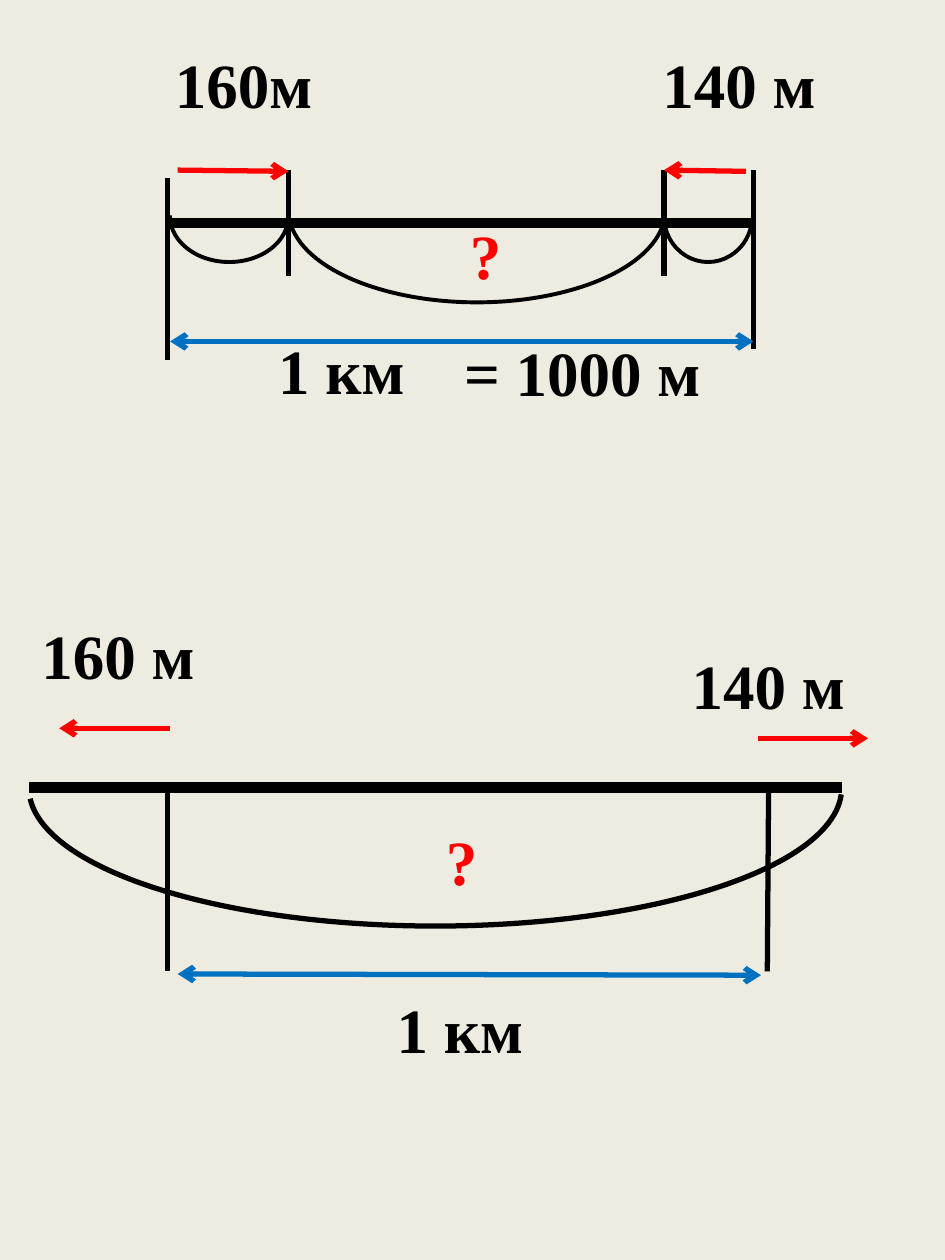
from dataclasses import dataclass
from lxml.etree import SubElement
from pptx import Presentation
from pptx.dml.color import RGBColor
from pptx.enum.shapes import MSO_CONNECTOR as CONN, MSO_SHAPE as SHAPE
from pptx.enum.text import MSO_AUTO_SIZE as FIT, PP_ALIGN
from pptx.oxml.ns import qn
from pptx.util import Inches, Pt


@dataclass(frozen=True)
class Theme:
    paper: RGBColor = RGBColor(0xEE, 0xEC, 0xE1)
    ink: RGBColor = RGBColor(0, 0, 0)
    red: RGBColor = RGBColor(0xFF, 0, 0)
    blue: RGBColor = RGBColor(0, 0x70, 0xC0)
    font: str = "Times New Roman"
    size: Pt = Pt(36)
    road: Pt = Pt(6)
    stroke: Pt = Pt(3)
    thin: Pt = Pt(2.25)


T = Theme()
prs = Presentation()
prs.slide_width, prs.slide_height = Inches(7.5), Inches(10)
s = prs.slides.add_slide(prs.slide_layouts[6])
s.background.fill.solid()
s.background.fill.fore_color.rgb = T.paper


def add_line(x1, y1, x2, y2, color=T.ink, width=T.stroke, ends=()):
    c = s.shapes.add_connector(CONN.STRAIGHT, *map(Inches, (x1, y1, x2, y2)))
    c.line.color.rgb = color
    c.line.width = width
    ln = c.line._get_or_add_ln()
    for end in ends:
        SubElement(ln, qn(f"a:{end}"), type="arrow")
    SubElement(c._element.spPr, qn("a:effectLst"))


roads = [(1.35, 1.77, 5.98), (0.23, 6.25, 6.68)]
for x1, y, x2 in roads:
    add_line(x1, y, x2, y, width=T.road)

posts = [
    (1.33, 1.41, 1.33, 2.86), (5.98, 1.35, 5.98, 2.77),
    (2.29, 1.35, 2.29, 2.19), (5.27, 1.35, 5.27, 2.19),
    (6.1, 6.25, 6.09, 7.71), (1.33, 6.25, 1.33, 7.71),
]
for post in posts:
    add_line(*post)

moves = [
    (1.41, 1.35, 2.29, 1.36), (5.92, 1.36, 5.27, 1.35),
    (1.35, 5.78, 0.47, 5.78), (6.02, 5.86, 6.89, 5.86),
]
for move in moves:
    add_line(*move, color=T.red, ends=["tailEnd"])

distances = [(1.35, 2.71, 5.98, 2.71), (1.41, 7.73, 6.04, 7.74)]
for distance in distances:
    add_line(*distance, color=T.blue, ends=["headEnd", "tailEnd"])

arcs = [
    (1.35, 1.35, 0.94, 0.73, 1.88, 180.59, T.thin),
    (2.29, 0.94, 2.99, 1.46, 3.76, 177.18, T.thin),
    (5.27, 1.35, 0.7, 0.73, 4.8, 180.59, T.thin),
    (0.23, 5.16, 6.45, 2.19, 0.89, 178.5, T.stroke),
]
for x, y, w, h, start, stop, width in arcs:
    sp = s.shapes.add_shape(SHAPE.ARC, *map(Inches, (x, y, w, h)))
    sp.shadow.inherit = False
    sp.fill.background()
    sp.line.color.rgb = T.ink
    sp.line.width = width
    for i, degrees in enumerate((start, stop)):
        sp.adjustments[i] = degrees * 0.6

labels = [
    ("160м", 1.29, 0.31, 1.52, T.ink),
    ("140 м", 5.16, 0.31, 1.56, T.ink),
    ("1 км", 2.11, 2.58, 1.86, T.ink),
    (" = 1000 м", 3.46, 2.6, 2.32, T.ink),
    ("?", 3.63, 1.67, 0.35, T.red),
    ("160 м", 0.23, 4.84, 1.6, T.ink),
    ("140 м", 5.39, 5.08, 1.7, T.ink),
    ("1 км", 3.05, 7.81, 1.54, T.ink),
    ("?", 3.44, 6.48, 0.35, T.red),
]
for text, x, y, w, color in labels:
    tf = s.shapes.add_textbox(*map(Inches, (x, y, w, 0.71))).text_frame
    tf.word_wrap = True
    tf.auto_size = FIT.SHAPE_TO_FIT_TEXT
    p = tf.paragraphs[0]
    p.text = text
    p.alignment = PP_ALIGN.LEFT
    p.font.name, p.font.size, p.font.bold = T.font, T.size, True
    p.font.color.rgb = color

prs.save("out.pptx")
